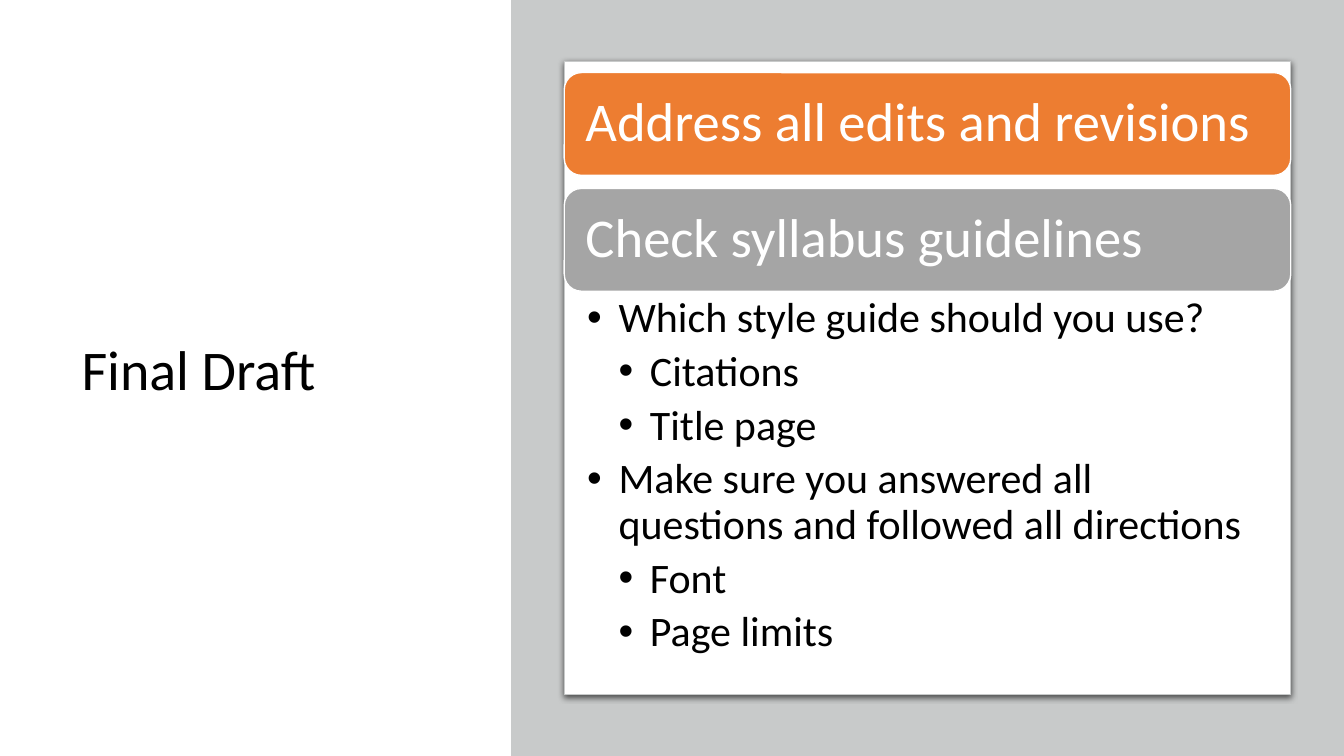
from dataclasses import dataclass
from lxml.etree import SubElement
from pptx import Presentation
from pptx.dml.color import RGBColor
from pptx.enum.shapes import MSO_SHAPE
from pptx.enum.text import MSO_ANCHOR, MSO_AUTO_SIZE, PP_ALIGN
from pptx.oxml.ns import qn
from pptx.util import Cm, Pt


@dataclass(frozen=True)
class Theme:
    font: str = "Calibri"
    black: str = "000000"
    white: str = "FFFFFF"
    panel: str = "C8CACA"
    orange: str = "ED7D31"
    gray: str = "A5A5A5"
    title: int = 40
    bar: int = 39
    body: int = 30


class Deck:
    """Draws styled elements on the current slide."""

    def __init__(self, theme):
        self.theme = theme
        self.show = Presentation()
        self.show.slide_width, self.show.slide_height = Cm(33.87), Cm(19.05)
        self.slide = self.show.slides.add_slide(self.show.slide_layouts[5])

    def style(self, para, size, color):
        para.alignment = PP_ALIGN.LEFT
        para.line_spacing = 0.9
        para.font.name = self.theme.font
        para.font.size = Pt(size)
        para.font.color.rgb = RGBColor.from_string(color)

    def inset(self, frame, left, top, right, bottom):
        frame.word_wrap = True
        frame.margin_left, frame.margin_top = Cm(left), Cm(top)
        frame.margin_right, frame.margin_bottom = Cm(right), Cm(bottom)

    def title(self, box, text):
        head = self.slide.shapes.title
        head.left, head.top, head.width, head.height = map(Cm, box)
        frame = head.text_frame
        frame.text = text
        frame.auto_size = MSO_AUTO_SIZE.NONE
        frame.vertical_anchor = MSO_ANCHOR.MIDDLE
        self.style(frame.paragraphs[0], self.theme.title, self.theme.black)

    def block(self, kind, box, fill, line=None, width=1):
        shape = self.slide.shapes.add_shape(kind, *map(Cm, box))
        shape.shadow.inherit = False
        shape.fill.solid()
        shape.fill.fore_color.rgb = RGBColor.from_string(fill)
        if line:
            shape.line.color.rgb = RGBColor.from_string(line)
            shape.line.width = Pt(width)
        else:
            shape.line.fill.background()
        return shape

    def card(self, box):
        shape = self.block(MSO_SHAPE.ROUNDED_RECTANGLE, box,
                           self.theme.white, self.theme.panel, 0.75)
        shape.adjustments[0] = 0
        effect = shape.element.spPr.find(qn("a:effectLst"))
        shade = SubElement(effect, qn("a:outerShdw"), blurRad=str(Pt(4.5)),
                           dist=str(Pt(1.5)), dir="5400000", rotWithShape="0")
        color = SubElement(shade, qn("a:srgbClr"), val=self.theme.black)
        SubElement(color, qn("a:alpha"), val="63000")

    def bar(self, box, text, fill):
        shape = self.block(MSO_SHAPE.ROUNDED_RECTANGLE, box, fill, self.theme.white)
        frame = shape.text_frame
        self.inset(frame, 0.41, 0.41, 0.41, 0.41)
        frame.vertical_anchor = MSO_ANCHOR.MIDDLE
        frame.text = text
        self.style(frame.paragraphs[0], self.theme.bar, self.theme.white)

    def bullets(self, box, items):
        frame = self.slide.shapes.add_textbox(*map(Cm, box)).text_frame
        self.inset(frame, 0.58, 0.13, 0.76, 0.13)
        step = Cm(0.79)
        for index, (level, text) in enumerate(items):
            para = frame.add_paragraph() if index else frame.paragraphs[0]
            para.text = text
            para.level = level
            self.style(para, self.theme.body, self.theme.black)
            para.space_after = Pt(6)
            props = para._p.get_or_add_pPr()
            props.set("marL", str(step * level))
            props.set("indent", str(-step))
            SubElement(props, qn("a:buFont"), typeface="Arial")
            SubElement(props, qn("a:buChar"), char="•")
            # keep


def main():
    theme = Theme()
    deck = Deck(theme)
    left, wide = 14.22, 18.31
    deck.title((1.8, 1.75, 10.19, 15.29), "Final Draft")
    deck.block(MSO_SHAPE.RECTANGLE, (12.88, 0, 20.99, 19.05), theme.panel)
    deck.card((left, 1.55, wide, 15.95))
    bars = [("Address all edits and revisions", theme.orange),
            ("Check syllabus guidelines", theme.gray)]
    for row, (text, fill) in enumerate(bars):
        deck.bar((left, 1.83 + 2.92 * row, wide, 2.59), text, fill)
    deck.bullets((left, 7.34, wide, 9.86), [
        (1, "Which style guide should you use?"),
        (2, "Citations"),
        (2, "Title page"),
        (1, "Make sure you answered all questions and followed all directions"),
        (2, "Font"),
        (2, "Page limits"),
    ])
    deck.show.save("out.pptx")


if __name__ == "__main__":
    main()
